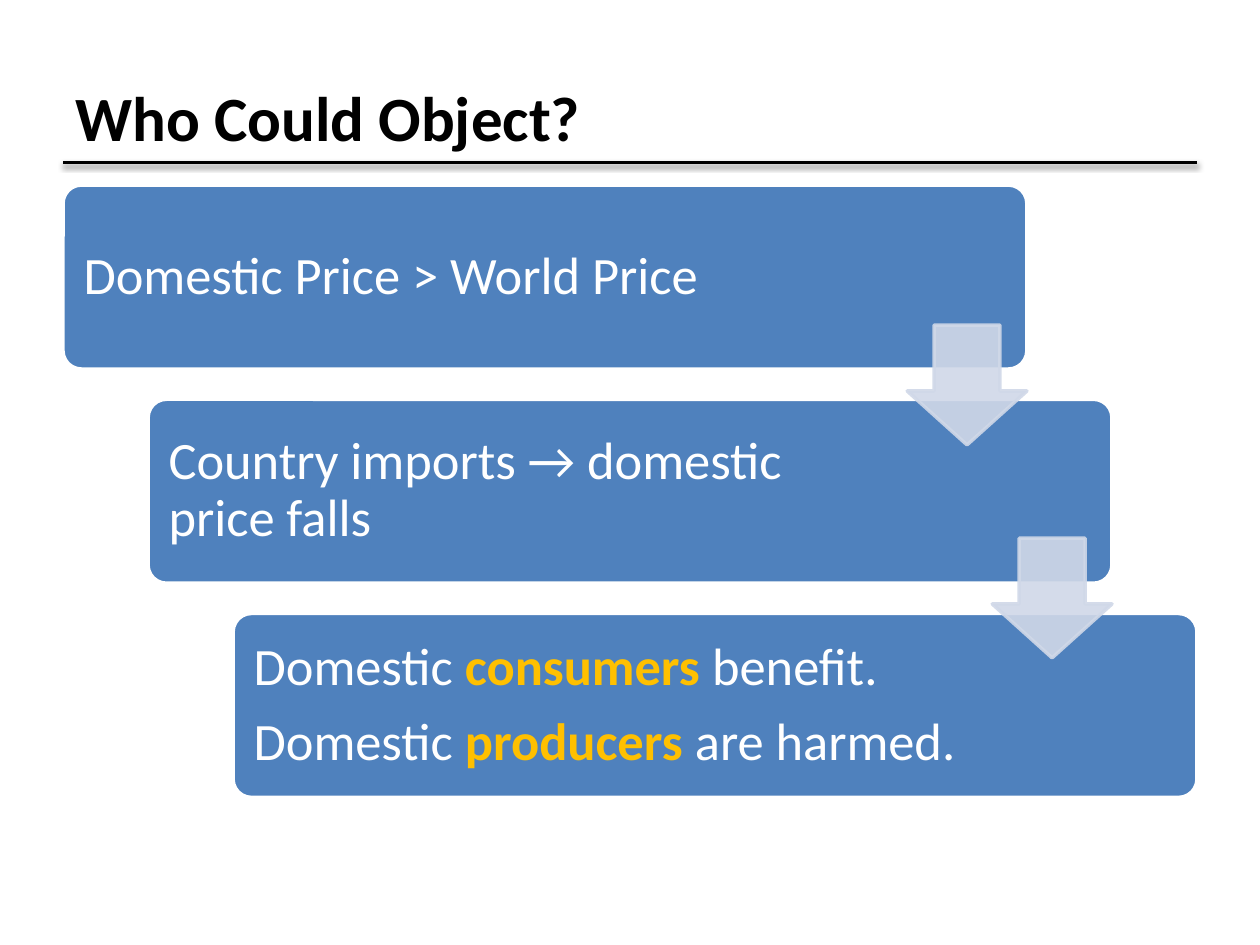
"""Build the slide on who could object to importing at the world price."""
import pptx
import pptx.dml.color
import pptx.enum.shapes
import pptx.enum.text
import pptx.oxml
import pptx.oxml.ns
import pptx.util

Pt = pptx.util.Pt
Shapes = pptx.enum.shapes.MSO_SHAPE
COLORS = {"ink": "000000", "step": "4F81BD", "arrow": "D0D8E8", "paper": "FFFFFF", "accent": "FFC000"}
NAMESPACE = pptx.oxml.ns.nsdecls("a")


def write(para, text, size=30, color="paper", bold=False):
    span = para.add_run()
    span.text = text
    span.font.name = "Calibri"
    span.font.size = Pt(size)
    span.font.bold = bold
    span.font.color.rgb = pptx.dml.color.RGBColor.from_string(COLORS[color])


def paint(shape, fill, line, opacity=100):
    shape.shadow.inherit = False
    shape.fill.solid()
    shape.line.width = Pt(2)
    for target, color in ((shape.fill.fore_color, fill), (shape.line.color, line)):
        target.rgb = pptx.dml.color.RGBColor.from_string(COLORS[color])
    if opacity < 100:
        for tint in shape._element.spPr.iter(pptx.oxml.ns.qn("a:srgbClr")):
            tint.append(pptx.oxml.parse_xml(f'<a:alpha {NAMESPACE} val="{opacity * 1000}"/>'))


deck = pptx.Presentation()
deck.slide_width, deck.slide_height = Pt(720), Pt(540)
page = deck.slides.add_slide(deck.slide_layouts[6])

rule = page.shapes.add_connector(
    pptx.enum.shapes.MSO_CONNECTOR.STRAIGHT, Pt(36), Pt(92.9), Pt(684), Pt(92.9))
rule.line.width = Pt(2)
rule.line.color.rgb = pptx.dml.color.RGBColor.from_string(COLORS["ink"])
rule._element.spPr.append(pptx.oxml.parse_xml(
    f'<a:effectLst {NAMESPACE}><a:outerShdw blurRad="{Pt(3.1)}" dist="{Pt(1.6)}" dir="5400000" '
    f'rotWithShape="0"><a:srgbClr val="{COLORS["ink"]}"><a:alpha val="38000"/></a:srgbClr>'
    '</a:outerShdw></a:effectLst>'))

title = page.shapes.add_textbox(Pt(36), Pt(21.6), Pt(648), Pt(90)).text_frame
title.word_wrap = True
title.vertical_anchor = pptx.enum.text.MSO_ANCHOR.MIDDLE
write(title.paragraphs[0], "Who Could Object?", size=36, color="ink", bold=True)

steps = [
    (437.8, [["Domestic Price > World Price"]]),
    (427.7, [["Country imports → domestic price falls"]]),
    (427.7, [["Domestic ", "consumers", " benefit."],
             ["Domestic ", "producers", " are harmed."]]),
]
for index, (width, lines) in enumerate(steps):
    left, top = 36 + 48.6 * index, 105.8 + 122.4 * index
    step = page.shapes.add_shape(Shapes.ROUNDED_RECTANGLE, Pt(left), Pt(top), Pt(550.8), Pt(105.1))
    step.adjustments[0] = 0.1
    paint(step, "step", "paper")

    box = page.shapes.add_textbox(Pt(left + 3.1), Pt(top + 3.1), Pt(width), Pt(98.9)).text_frame
    box.word_wrap = True
    box.vertical_anchor = pptx.enum.text.MSO_ANCHOR.MIDDLE
    box.margin_left = box.margin_top = box.margin_right = box.margin_bottom = Pt(8.64)
    for number, parts in enumerate(lines):
        para = box.add_paragraph() if number else box.paragraphs[0]
        para.line_spacing = 0.9
        para.space_after = Pt(10.5)
        for place, text in enumerate(parts):
            accented = place == 1
            write(para, text, color="accent" if accented else "paper", bold=accented)

for index in range(len(steps) - 1):
    arrow = page.shapes.add_shape(
        Shapes.DOWN_ARROW, Pt(518.4 + 48.6 * index), Pt(185.8 + 121.7 * index), Pt(68.4), Pt(68.4))
    arrow.adjustments[0], arrow.adjustments[1] = 0.55, 0.45
    paint(arrow, "arrow", "arrow", opacity=90)

deck.save("out.pptx")
